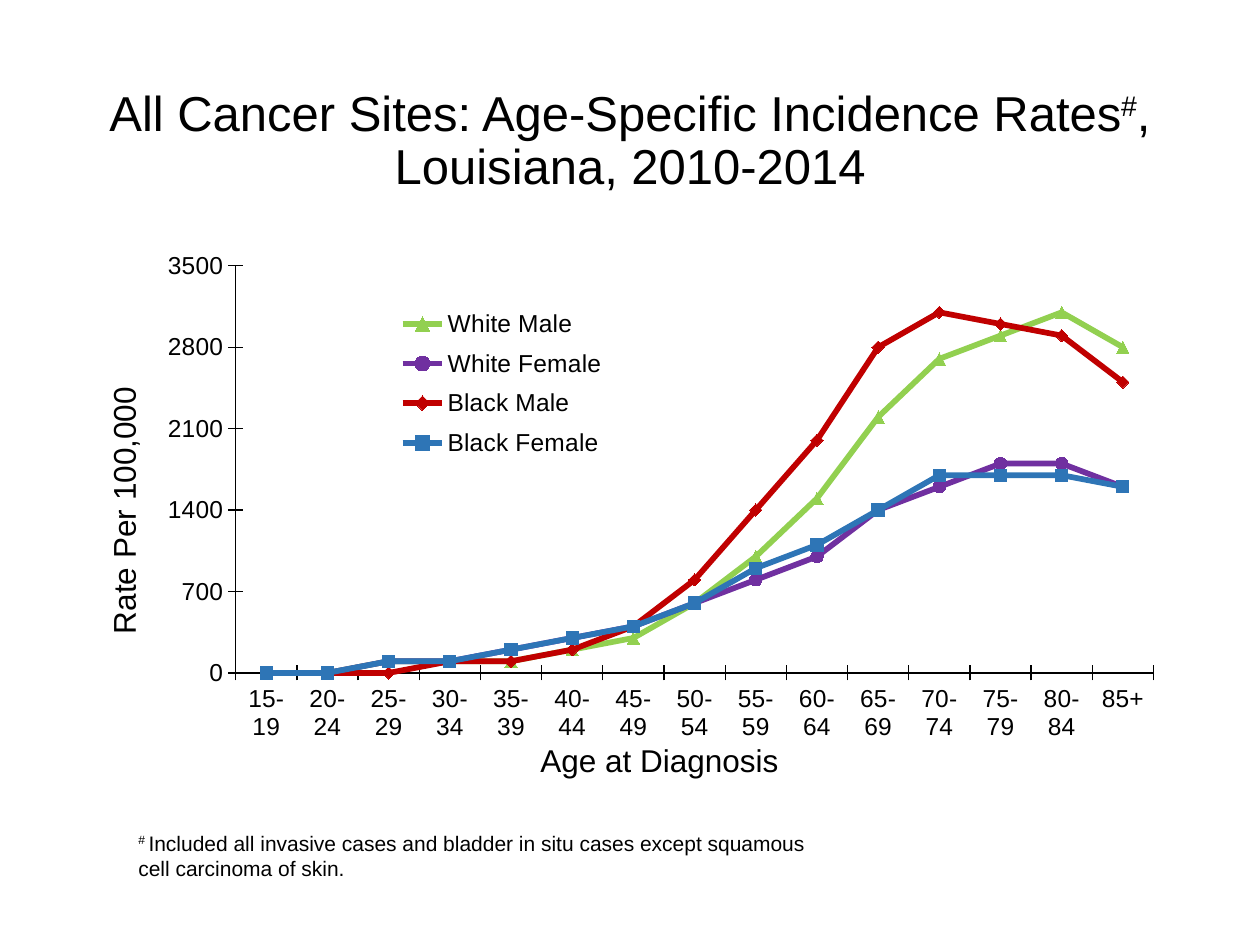
from dataclasses import dataclass

from lxml import etree
from pptx import Presentation
from pptx.chart.data import CategoryChartData
from pptx.dml.color import RGBColor
from pptx.enum.chart import (XL_CHART_TYPE, XL_LEGEND_POSITION,
                             XL_MARKER_STYLE, XL_TICK_MARK)
from pptx.enum.text import MSO_ANCHOR, PP_ALIGN
from pptx.oxml.ns import qn
from pptx.util import Inches, Pt

LINE = XL_CHART_TYPE.LINE_MARKERS
BOTTOM = XL_LEGEND_POSITION.BOTTOM
CROSS, NO_TICK = XL_TICK_MARK.CROSS, XL_TICK_MARK.NONE
MARK = XL_MARKER_STYLE
MIDDLE, TOP = MSO_ANCHOR.MIDDLE, MSO_ANCHOR.TOP
LEFT, CENTER = PP_ALIGN.LEFT, PP_ALIGN.CENTER


@dataclass(frozen=True)
class Theme:
    face: str = "Arial"
    ink: RGBColor = RGBColor(0, 0, 0)
    green: RGBColor = RGBColor(0x92, 0xD0, 0x50)
    purple: RGBColor = RGBColor(0x70, 0x30, 0xA0)
    red: RGBColor = RGBColor(0xC0, 0x00, 0x00)
    blue: RGBColor = RGBColor(0x2E, 0x75, 0xB6)
    title: Pt = Pt(28)
    label: Pt = Pt(18)
    tick: Pt = Pt(14)
    note: Pt = Pt(12)
    curve: Pt = Pt(3.25)
    axis: Pt = Pt(0.75)


THEME = Theme()

AGES = [f"{age}-{age + 4}" for age in range(15, 85, 5)] + ["85+"]
RATES = [
    ("White Male", THEME.green, MARK.TRIANGLE,
     (0, 0, 100, 100, 100, 200, 300, 600, 1000, 1500, 2200, 2700, 2900, 3100, 2800)),
    ("White Female", THEME.purple, MARK.CIRCLE,
     (0, 0, 100, 100, 200, 300, 400, 600, 800, 1000, 1400, 1600, 1800, 1800, 1600)),
    ("Black Male", THEME.red, MARK.DIAMOND,
     (0, 0, 0, 100, 100, 200, 400, 800, 1400, 2000, 2800, 3100, 3000, 2900, 2500)),
    ("Black Female", THEME.blue, MARK.SQUARE,
     (0, 0, 100, 100, 200, 300, 400, 600, 900, 1100, 1400, 1700, 1700, 1700, 1600)),
]


def style(font, size):
    looks = {"name": THEME.face, "size": size}
    for name, value in looks.items():
        setattr(font, name, value)
    font.color.rgb = THEME.ink


def add_text(slide, box, runs, size, wrap=True, align=LEFT, anchor=TOP,
             space=1.0, turn=0):
    """Place one paragraph; runs are (text, raised) pairs."""
    shape = slide.shapes.add_textbox(*map(Inches, box))
    shape.rotation = turn
    frame = shape.text_frame
    frame.word_wrap, frame.vertical_anchor = wrap, anchor
    para = frame.paragraphs[0]
    para.alignment, para.line_spacing = align, space
    for text, raised in runs:
        run = para.add_run()
        run.text = text
        style(run.font, size)
        if raised:
            run._r.get_or_add_rPr().set("baseline", "30000")


def make_layout(box, inner=False):
    """Build a manual chart layout from fractions of the chart's size."""
    layout = etree.Element(qn("c:layout"))
    manual = etree.SubElement(layout, qn("c:manualLayout"))
    parts = {"layoutTarget": "inner"} if inner else {}
    parts |= {"xMode": "edge", "yMode": "edge"}
    parts |= dict(zip("xywh", map(str, box)))
    for tag, value in parts.items():
        etree.SubElement(manual, qn(f"c:{tag}")).set("val", value)
    return layout


def drop_layout(node):
    for old in node.findall(qn("c:layout")):
        node.remove(old)


def set_axes(chart):
    for axis in (chart.category_axis, chart.value_axis):
        looks = {"has_major_gridlines": False, "major_tick_mark": CROSS,
                 "minor_tick_mark": NO_TICK}
        for name, value in looks.items():
            setattr(axis, name, value)
        style(axis.tick_labels.font, THEME.tick)
        axis.format.line.color.rgb = THEME.ink
        axis.format.line.width = THEME.axis
    scale = {"minimum_scale": 0, "maximum_scale": 3500, "major_unit": 700}
    for name, value in scale.items():
        setattr(chart.value_axis, name, value)


def set_curves(plot):
    plot.vary_by_categories = False
    for curve, (_, color, mark, _) in zip(plot.series, RATES):
        curve.smooth = False
        curve.format.line.color.rgb = color
        curve.format.line.width = THEME.curve
        curve.marker.style, curve.marker.size = mark, 7
        look = curve.marker.format
        look.fill.solid()
        look.fill.fore_color.rgb = color
        look.line.color.rgb = color


def set_legend(chart):
    chart.has_legend = True
    legend = chart.legend
    legend.position, legend.include_in_layout = BOTTOM, False
    style(legend.font, THEME.tick)
    node = legend._element
    drop_layout(node)
    node.find(qn("c:legendPos")).addnext(make_layout((0.24, 0.09, 0.21, 0.33)))


def add_rates(slide, box):
    """Draw the line chart and its two axis captions around it."""
    data = CategoryChartData(number_format="0")
    data.categories = AGES
    for name, _, _, values in RATES:
        data.add_series(name, values)
    chart = slide.shapes.add_chart(LINE, *map(Inches, box), data).chart
    chart.has_title = False
    style(chart.font, THEME.tick)
    set_axes(chart)
    set_curves(chart.plots[0])
    set_legend(chart)
    area = chart._chartSpace.chart.plotArea
    drop_layout(area)
    area.insert(0, make_layout((0.085, 0.027, 0.896, 0.79), inner=True))

    left, top, _, height = box
    add_text(slide, (left + 3.01, top + height - 0.26, 2.11, 0.4),
             [("Age at Diagnosis", False)], THEME.label, wrap=False)
    add_text(slide, (left - 1.29, top + 1.84, 2.18, 0.4),
             [("Rate Per 100,000", False)], THEME.label, wrap=False, turn=270)


def add_title(slide, box):
    runs = [("All Cancer Sites: Age-Specific Incidence Rates", False),
            ("#", True), (", Louisiana, 2010-2014", False)]
    add_text(slide, box, runs, THEME.title, align=CENTER, anchor=MIDDLE, space=0.9)


def add_note(slide, box):
    runs = [("# ", True),
            ("Included all invasive cases and bladder in situ cases except "
             "squamous cell carcinoma of skin.", False)]
    add_text(slide, box, runs, THEME.note)


def main():
    deck = Presentation()
    deck.slide_width, deck.slide_height = Inches(10), Inches(7.5)
    slide = deck.slides.add_slide(deck.slide_layouts[6])
    add_title(slide, (0.69, 0.4, 8.62, 1.45))
    add_rates(slide, (1.18, 2, 8.13, 4.09))
    add_note(slide, (1, 6.54, 5.76, 0.5))
    deck.save("out.pptx")


if __name__ == "__main__":
    main()
